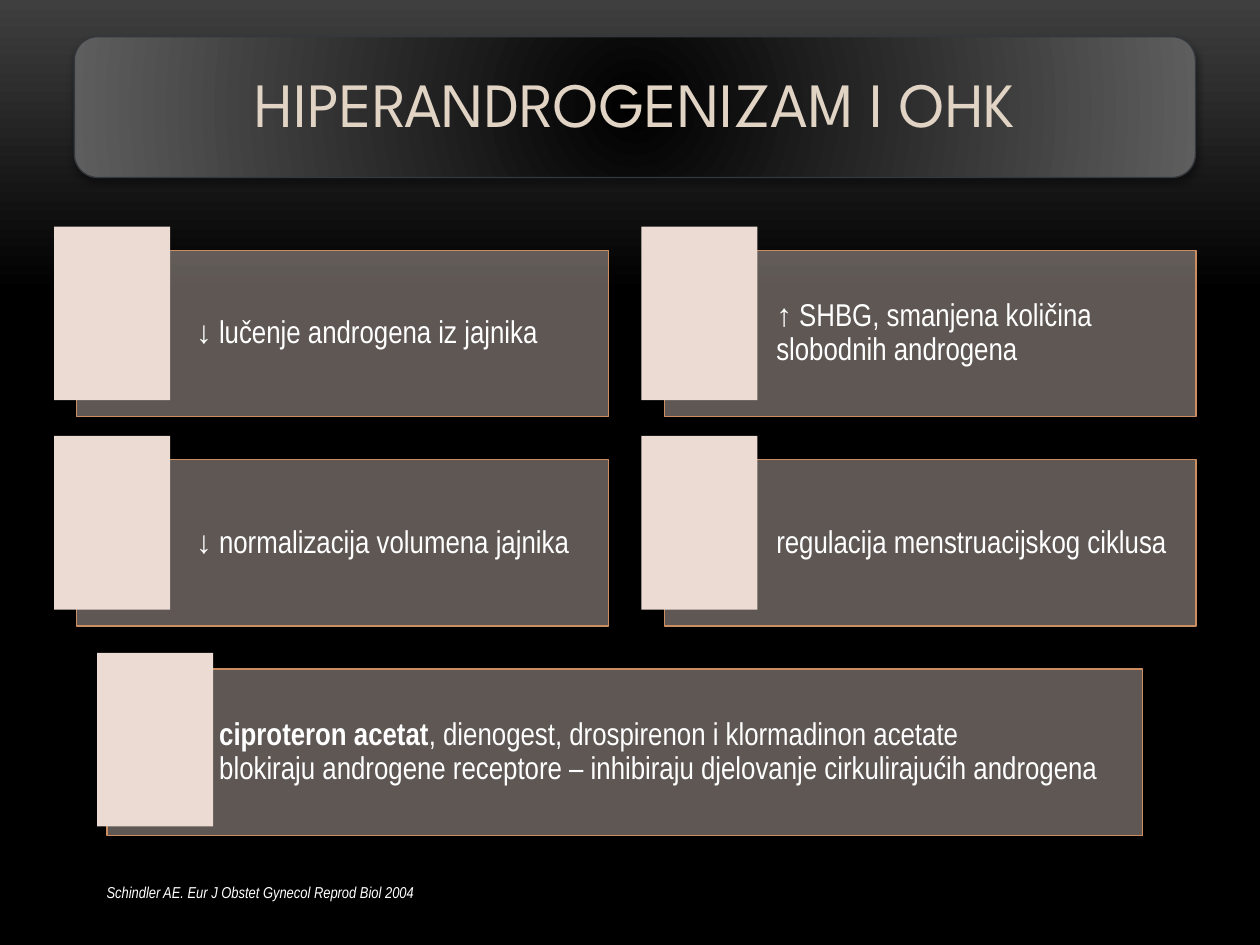
from lxml import etree
from pptx import Presentation, util as u
from pptx.dml.color import RGBColor
from pptx.enum import shapes, text
from pptx.oxml import parse_xml
from pptx.oxml.ns import nsdecls, qn

# Content
TITLE = "HIPERANDROGENIZAM I OHK"
CITATION = "Schindler AE. Eur J Obstet Gynecol Reprod Biol 2004"
# Each card is a list of lines; each line is a list of (words, bold)
GRID_CARDS = [
    [[(" ↓ lučenje androgena iz jajnika", False)]],
    [[("↑ SHBG, smanjena količina slobodnih androgena", False)]],
    [[(" ↓ normalizacija volumena jajnika", False)]],
    [[("regulacija menstruacijskog ciklusa", False)]],
]
WIDE_CARD = [
    [("ciproteron acetat", True), (", dienogest, drospirenon i klormadinon acetate", False)],
    [("blokiraju androgene receptore – inhibiraju djelovanje cirkulirajućih androgena", False)],
]

# Format and layout, in centimetres
TITLE_FONT = {"name": "League Spartan", "size": u.Pt(36), "color": "E1D4C5"}
CARD_FONT = {"name": "Arial Narrow", "size": u.Pt(18), "color": "FFFFFF"}
CITATION_FONT = {"name": "Arial Narrow", "size": u.Pt(9), "color": "FFFFFF", "italic": True}
COLUMNS = 2
CARD_LEFT, CARD_TOP, CARD_WIDTH, CARD_HEIGHT = 1.55, 5.05, 10.72, 3.35
COLUMN_STEP, ROW_STEP = 11.84, 4.22
WIDE_LEFT, WIDE_WIDTH = 2.16, 20.88
TILE_WIDTH, TILE_HEIGHT = 2.34, 3.5


def color(hex_code):
    return RGBColor.from_string(hex_code)


def set_font(font, values):
    for name, value in values.items():
        if name == "color":
            font.color.rgb = color(value)
        else:
            setattr(font, name, value)


def set_insets(frame, *insets):
    for side, inset in zip(("left", "top", "right", "bottom"), insets):
        setattr(frame, "margin_" + side, u.Cm(inset))


def use_gradient(parent, stops, direction):
    """Replace the solid fill of parent with a gradient."""
    stop_list = "".join(f'<a:gs pos="{percent * 1000}"><a:srgbClr val="{code}"/></a:gs>'
                        for percent, code in stops)
    gradient = parse_xml(f'<a:gradFill {nsdecls("a")} rotWithShape="1">'
                         f'<a:gsLst>{stop_list}</a:gsLst>{direction}</a:gradFill>')
    parent.replace(parent.find(qn("a:solidFill")), gradient)


def add_box(slide, kind, place, fill, line=None):
    shape = slide.shapes.add_shape(kind, *map(u.Cm, place))
    shape.shadow.inherit = False
    shape.fill.solid()
    shape.fill.fore_color.rgb = color(fill)
    if line:
        shape.line.color.rgb = color(line)
        shape.line.width = u.Pt(0.75)
    else:
        shape.line.fill.background()
    return shape


def write_lines(shape, lines, font, align):
    frame = shape.text_frame
    frame.word_wrap = True
    frame.vertical_anchor = text.MSO_ANCHOR.MIDDLE
    paragraph = frame.paragraphs[0]
    paragraph.alignment = align
    paragraph.line_spacing = 0.9
    for index, line in enumerate(lines):
        if index:
            paragraph.add_line_break()
        for words, bold in line:
            run = paragraph.add_run()
            run.text = words
            set_font(run.font, {**font, "bold": bold})


def add_card(slide, lines, left, top, width, tile_shift):
    card = add_box(slide, shapes.MSO_SHAPE.RECTANGLE, (left, top, width, CARD_HEIGHT),
                   "ECDBD2", "CC8E60")
    fill_color = card.element.spPr.find(qn("a:solidFill"))[0]
    etree.SubElement(fill_color, qn("a:alpha"), val="40000")
    write_lines(card, lines, CARD_FONT, text.PP_ALIGN.LEFT)
    set_insets(card.text_frame, 2.26, 0.18, 0.18, 0.18)
    shift_x, shift_y = tile_shift
    add_box(slide, shapes.MSO_SHAPE.RECTANGLE,
            (left - shift_x, top - shift_y, TILE_WIDTH, TILE_HEIGHT), "ECDBD2")


def add_title(slide):
    banner = add_box(slide, shapes.MSO_SHAPE.ROUNDED_RECTANGLE, (1.5, 0.74, 22.6, 2.84),
                     "000000", "34373B")
    properties = banner.element.spPr
    use_gradient(properties, [(0, "000000"), (100, "5E5E5E")],
                 '<a:path path="circle"><a:fillToRect l="50000" t="50000" r="50000" b="50000"/></a:path>')
    properties.find(qn("a:effectLst")).append(parse_xml(
        f'<a:outerShdw {nsdecls("a")} blurRad="{u.Pt(4)}" dist="{u.Pt(2)}" dir="5400000" '
        'rotWithShape="0"><a:srgbClr val="000000"><a:alpha val="40000"/></a:srgbClr></a:outerShdw>'))
    write_lines(banner, [[(TITLE, False)]], TITLE_FONT, text.PP_ALIGN.CENTER)
    set_insets(banner.text_frame, 0.4, 0.4, 0.4, 0.4)


def add_citation(slide):
    box = slide.shapes.add_textbox(*map(u.Cm, (1.9, 17.68, 6.78, 0.64)))
    box.text_frame.word_wrap = False
    box.text_frame.auto_size = text.MSO_AUTO_SIZE.SHAPE_TO_FIT_TEXT
    run = box.text_frame.paragraphs[0].add_run()
    run.text = CITATION
    set_font(run.font, CITATION_FONT)


def main():
    presentation = Presentation()
    presentation.slide_width, presentation.slide_height = u.Cm(25.4), u.Cm(19.05)
    slide = presentation.slides.add_slide(presentation.slide_layouts[6])

    # Background fades from grey to black
    slide.background.fill.solid()
    use_gradient(slide.element.find(".//" + qn("p:bgPr")),
                 [(0, "3F3F3F"), (31, "000000"), (100, "000000")],
                 '<a:lin ang="5400000" scaled="0"/>')
    add_title(slide)

    # Two-column grid, then the wide card on the next row
    for index, lines in enumerate(GRID_CARDS):
        row, column = divmod(index, COLUMNS)
        add_card(slide, lines, CARD_LEFT + column * COLUMN_STEP, CARD_TOP + row * ROW_STEP,
                 CARD_WIDTH, (0.46, 0.48))
    rows = len(GRID_CARDS) // COLUMNS
    add_card(slide, WIDE_CARD, WIDE_LEFT, CARD_TOP + rows * ROW_STEP, WIDE_WIDTH, (0.2, 0.33))

    add_citation(slide)
    presentation.save("out.pptx")


if __name__ == "__main__":
    main()
